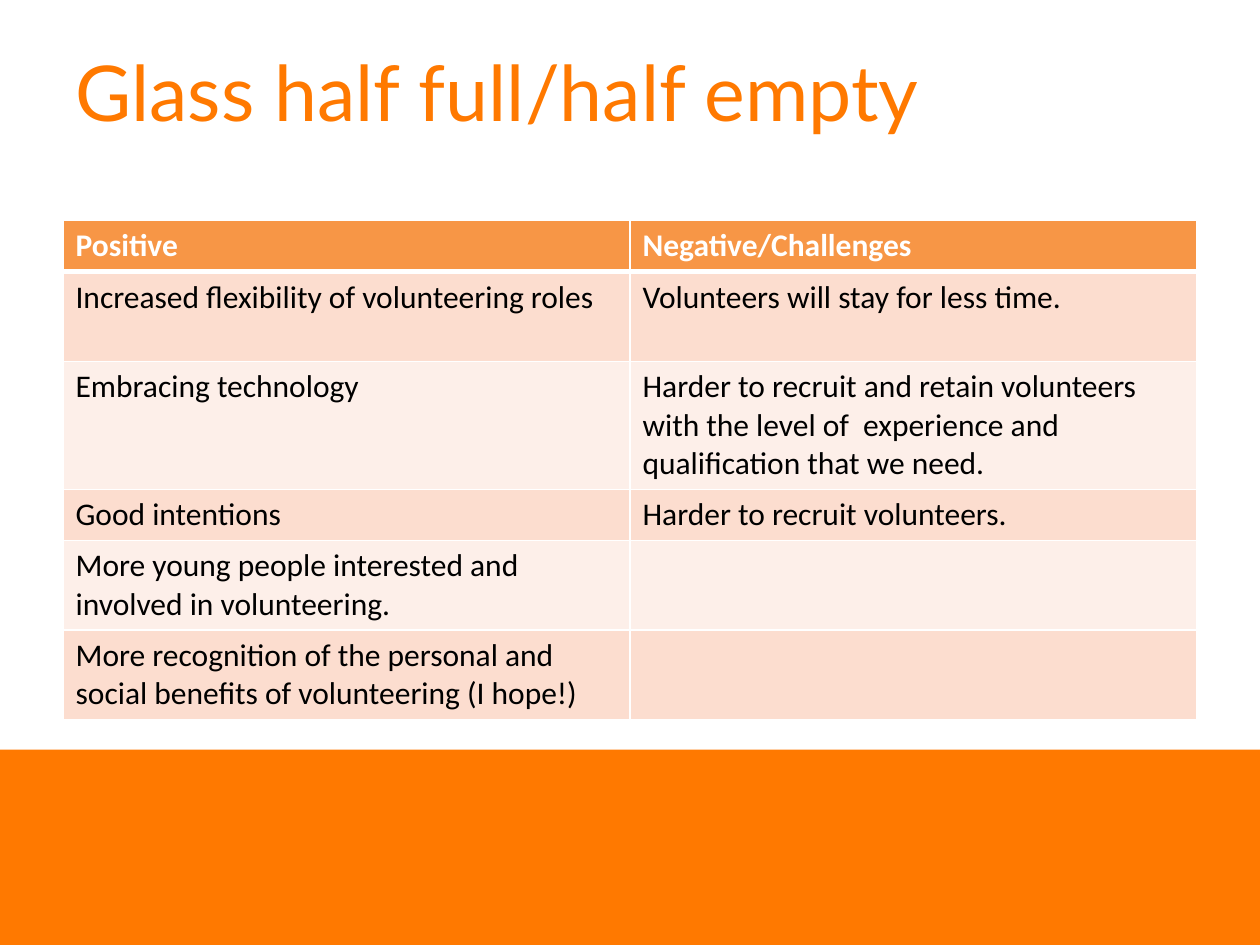
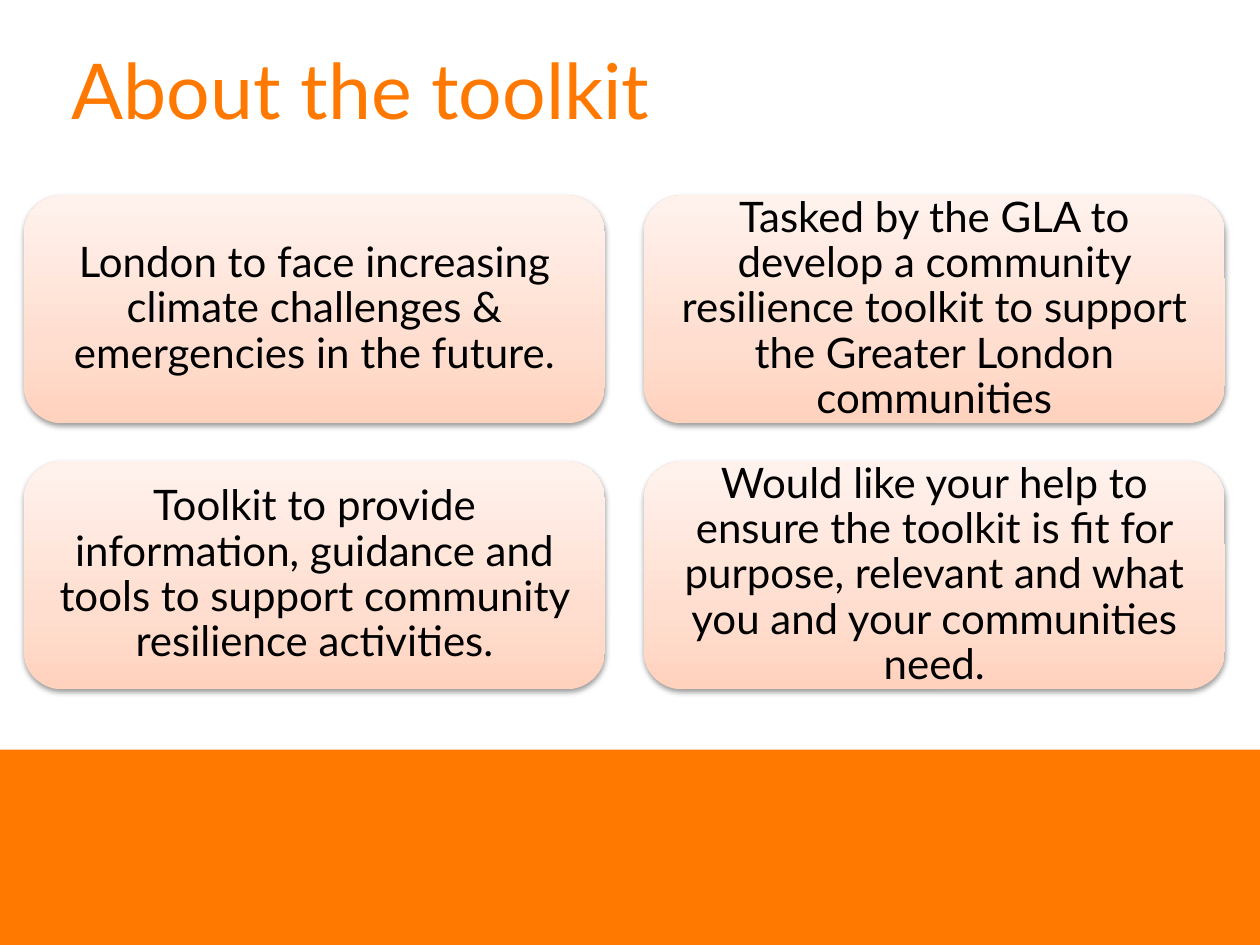
"""Build two slides on volunteering trends and the community resilience toolkit."""
from copy import deepcopy

from lxml.etree import SubElement
from pptx import Presentation
from pptx.dml.color import RGBColor
from pptx.enum.shapes import MSO_SHAPE as Shape
from pptx.enum.text import MSO_ANCHOR as Anchor, MSO_AUTO_SIZE as AutoSize, PP_ALIGN as Align
from pptx.oxml.ns import qn
from pptx.util import Pt

COLORS = {
    "brand": "FF7900", "white": "FFFFFF", "black": "000000", "header": "F79646",
    "row_dark": "FCDDCF", "row_light": "FDEFE9",
    "card_low": "FFD2BD", "card_mid": "FFDED0", "card_high": "FFF2ED",
}
TITLE_FONT = {"name": "Lato", "size": Pt(44)}
CARD_FONT = {"name": "Lato", "size": Pt(24)}
HEADER_FONT = {"name": "Calibri", "size": Pt(18), "bold": True}
CELL_FONT = {**HEADER_FONT, "bold": False}
CARD_STOPS = [(0, "card_low"), (0.35, "card_mid"), (1, "card_high")]

LINE_HEIGHT, ROW_PADDING = 21.9, 7.4
OUTLOOK_ROWS = [
    (1, "Positive", "Negative/Challenges"),
    (2, "Increased flexibility of volunteering roles", "Volunteers will stay for less time."),
    (3, "Embracing technology",
     "Harder to recruit and retain volunteers with the level of  experience "
     "and qualification that we need."),
    (1, "Good intentions", "Harder to recruit volunteers."),
    (2, "More young people interested and involved in volunteering.", ""),
    (2, "More recognition of the personal and social benefits of volunteering (I hope!)", ""),
]
TOOLKIT_CARDS = [
    "London to face increasing climate challenges & emergencies in the future.",
    "Tasked by the GLA to develop a community resilience toolkit to support "
    "the Greater London communities",
    "Toolkit to provide information, guidance and tools to support community "
    "resilience activities.",
    "Would like your help to ensure the toolkit is fit for purpose, relevant "
    "and what you and your communities need.",
]


def rgb(name):
    """Return a palette colour."""
    return RGBColor.from_string(COLORS[name])


def apply(target, values):
    """Set each attribute in values on target."""
    for name, value in values.items():
        setattr(target, name, value)


def write(frame, text, font, color, align, **paragraph_format):
    """Fill a text frame with one formatted paragraph."""
    paragraph = frame.paragraphs[0]
    apply(paragraph, {"alignment": align, **paragraph_format})
    if text:
        run = paragraph.add_run()
        run.text = text
        apply(run.font, font)
        run.font.color.rgb = rgb(color)


def set_frame(frame, anchor, side, vertical):
    """Set anchoring, wrapping and margins of a text frame."""
    apply(frame, {
        "word_wrap": True, "auto_size": AutoSize.NONE, "vertical_anchor": anchor,
        "margin_left": Pt(side), "margin_right": Pt(side),
        "margin_top": Pt(vertical), "margin_bottom": Pt(vertical),
    })


def add_slide(presentation, title, side=7.2, vertical=3.6):
    """Add a slide with the orange band and a title."""
    slide = presentation.slides.add_slide(presentation.slide_layouts[5])
    band = slide.shapes.add_shape(Shape.RECTANGLE, 0, Pt(428.4), Pt(720), Pt(111.6))
    band.shadow.inherit = False
    band.fill.solid()
    band.fill.fore_color.rgb = rgb("brand")
    band.line.fill.background()
    heading = slide.shapes.title
    apply(heading, {"left": Pt(36), "top": Pt(21.6), "width": Pt(648), "height": Pt(90)})
    set_frame(heading.text_frame, Anchor.TOP, side, vertical)
    write(heading.text_frame, title, TITLE_FONT, "brand", Align.LEFT)
    return slide


def add_borders(cell, widths):
    """Draw white borders of the given widths on a cell."""
    properties = cell._tc.get_or_add_tcPr()
    for side, width in widths.items():
        line = SubElement(properties, qn(f"a:ln{side}"), w=str(Pt(width)))
        fill = SubElement(line, qn("a:solidFill"))
        SubElement(fill, qn("a:srgbClr"), val=COLORS["white"])


def add_outlook_table(slide, rows):
    """Add the table of positives and challenges."""
    heights = [Pt(ROW_PADDING + LINE_HEIGHT * lines) for lines, *_ in rows]
    table = slide.shapes.add_table(
        len(rows), 2, Pt(36), Pt(126), Pt(648), sum(heights)).table
    apply(table, {"first_row": False, "horz_banding": False})
    for index, (_, *texts) in enumerate(rows):
        table.rows[index].height = heights[index]
        is_header = index == 0
        fill = "header" if is_header else "row_dark" if index % 2 else "row_light"
        font, color = (HEADER_FONT, "white") if is_header else (CELL_FONT, "black")
        widths = {"L": 1, "R": 1, "T": 3 if index == 1 else 1, "B": 3 if is_header else 1}
        for cell, text in zip(table.rows[index].cells, texts):
            add_borders(cell, widths)
            cell.fill.solid()
            cell.fill.fore_color.rgb = rgb(fill)
            write(cell.text_frame, text, font, color, Align.LEFT)


def fill_card(card):
    """Give a card its three-stop gradient, light at the top."""
    card.fill.gradient()
    card.fill.gradient_angle = 90
    stop_list = card._element.spPr.find(".//" + qn("a:gsLst"))
    stop_list.append(deepcopy(stop_list[-1]))
    for stop, (position, color) in zip(card.fill.gradient_stops, CARD_STOPS):
        stop.position = position
        stop.color.rgb = rgb(color)


def add_soft_shadow(shape):
    """Add a soft shadow below a shape."""
    shape.shadow.inherit = False
    effects = shape._element.spPr.find(qn("a:effectLst"))
    shadow = SubElement(effects, qn("a:outerShdw"), blurRad=str(Pt(3.1)),
                        dist=str(Pt(1.6)), dir="5400000", rotWithShape="0")
    color = SubElement(shadow, qn("a:srgbClr"), val=COLORS["black"])
    SubElement(color, qn("a:alpha"), val="38000")


def add_card(slide, text, left, top):
    """Add a rounded card with centred text."""
    card = slide.shapes.add_shape(
        Shape.ROUNDED_RECTANGLE, Pt(left), Pt(top), Pt(332), Pt(130.3))
    card.line.fill.background()
    fill_card(card)
    add_soft_shadow(card)
    set_frame(card.text_frame, Anchor.MIDDLE, 13.3, 13.3)
    write(card.text_frame, text, CARD_FONT, "black", Align.CENTER, line_spacing=0.9)


def main():
    """Build and save the presentation."""
    presentation = Presentation()
    apply(presentation, {"slide_width": Pt(720), "slide_height": Pt(540)})
    outlook = add_slide(presentation, "Glass half full/half empty")
    add_outlook_table(outlook, OUTLOOK_ROWS)
    toolkit = add_slide(presentation, "About the toolkit", side=5, vertical=2.9)
    for index, text in enumerate(TOOLKIT_CARDS):
        row, column = divmod(index, 2)
        add_card(toolkit, text, 13.7 + 354.2 * column, 111.6 + 152 * row)
    presentation.save("out.pptx")


if __name__ == "__main__":
    main()
